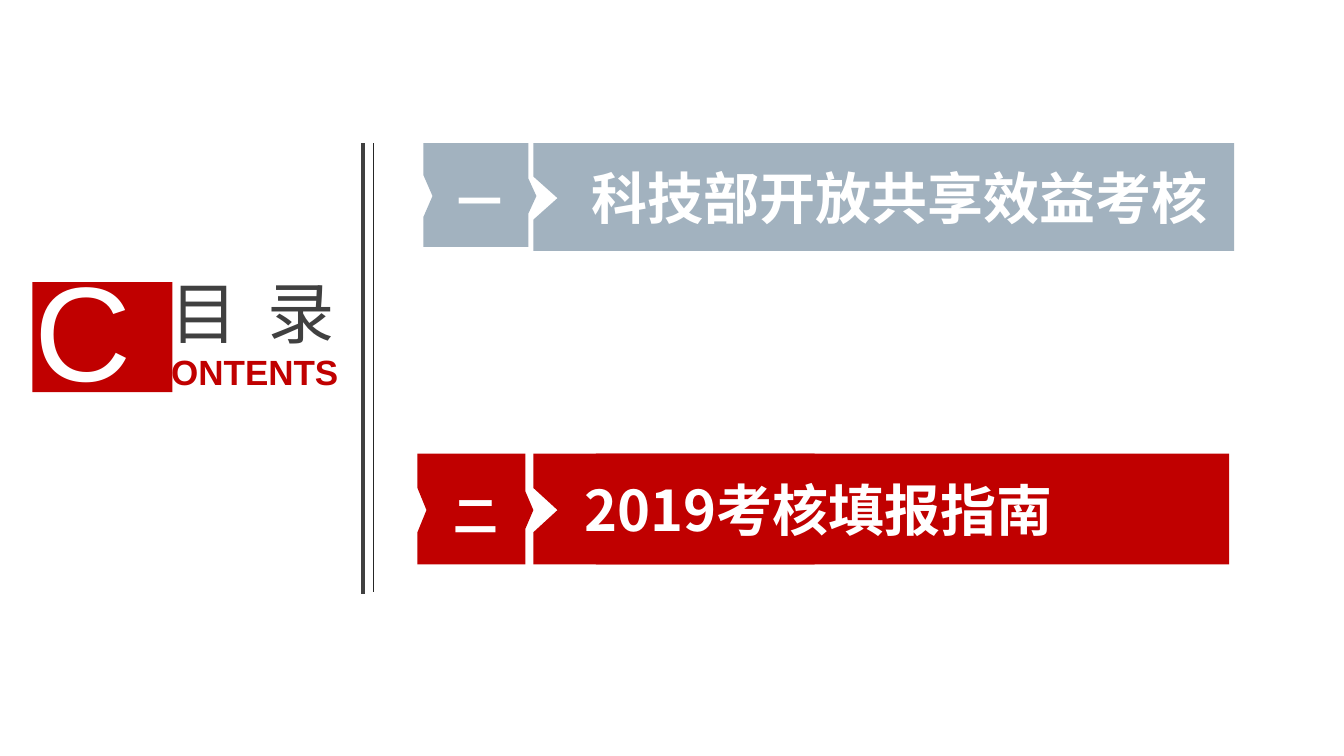
from dataclasses import dataclass

from lxml import etree
from pptx import Presentation
from pptx import util as u
from pptx.dml.color import RGBColor
from pptx.enum import shapes, text
from pptx.oxml.ns import qn

UNIT = u.Inches(0.1)  # one grid column or row
COLUMNS, ROWS = 133.3, 75


@dataclass(frozen=True)
class Theme:
    red: str = "C00000"
    grey_blue: str = "A2B2BF"
    dark: str = "404040"
    darkest: str = "262626"
    white: str = "FFFFFF"
    chinese: str = "Noto Sans CJK SC"
    latin: str = "Arial"
    initial_size: int = 96
    title_size: int = 48
    banner_size: int = 40
    number_size: int = 32
    contents_size: int = 25


THEME = Theme()


def grid(*lengths):
    """Turn grid columns or rows into slide lengths."""
    return [u.Emu(round(length * UNIT)) for length in lengths]


def paint(shape, color):
    shape.shadow.inherit = False
    shape.fill.solid()
    shape.fill.fore_color.rgb = RGBColor.from_string(color)
    shape.line.fill.background()


def write(shape, words, *, size, color, font=THEME.chinese, bold=False,
          align=text.PP_ALIGN.LEFT, anchor=text.MSO_ANCHOR.TOP,
          line_spacing=1.0, tracking=0):
    frame = shape.text_frame
    frame.word_wrap = True
    frame.auto_size = text.MSO_AUTO_SIZE.NONE
    frame.vertical_anchor = anchor
    paragraph = frame.paragraphs[0]
    paragraph.alignment = align
    paragraph.line_spacing = line_spacing
    paragraph.space_before = u.Pt(0)
    run = paragraph.add_run()
    run.text = words
    run.font.size = u.Pt(size)
    run.font.bold = bold
    run.font.color.rgb = RGBColor.from_string(color)
    run.font.name = font
    properties = run.font._element
    etree.SubElement(properties, qn("a:ea")).set("typeface", font)
    if tracking:
        properties.set("spc", str(round(tracking * 100)))


def add_text(slide, box, words, **style):
    write(slide.shapes.add_textbox(*grid(*box)), words, **style)


def add_block(slide, box, color):
    block = slide.shapes.add_shape(shapes.MSO_SHAPE.RECTANGLE, *grid(*box))
    paint(block, color)


def add_ribbon(slide, box, tip, notch, color):
    """Draw a ribbon with a notch on its left and a point on its right."""
    left, top, width, height = box
    shoulder = left + width - tip
    outline = [
        (left, 0), (shoulder, 0), (shoulder, 0.34), (left + width, 0.51),
        (shoulder, 0.68), (shoulder, 1), (left, 1), (left, 0.71),
        (left + notch, 0.51), (left, 0.31),
    ]
    points = [grid(x, top + share * height) for x, share in outline]
    builder = slide.shapes.build_freeform(*points[0])
    builder.add_line_segments(points[1:], close=True)
    ribbon = builder.convert_to_shape()
    paint(ribbon, color)
    return ribbon


def add_heading(slide, box):
    left, top, width, height = box
    # Red square with the initial
    add_block(slide, (left, top, 13.9, height), THEME.red)
    add_text(slide, (left - 0.8, top - 4, 14.7, 18.5), "C", font=THEME.latin,
             size=THEME.initial_size, color=THEME.white)
    # Title and the rest of the word
    title = slide.shapes.title
    title.left, title.top, title.width, title.height = grid(
        left + 12.7, top - 1.6, width - 12.7, 9.8)
    write(title, "目 录", size=THEME.title_size, color=THEME.dark, tracking=5.4)
    add_text(slide, (left + 12.8, top + 6.3, width - 12.8, 5.8), "ONTENTS",
             font=THEME.latin, size=THEME.contents_size, color=THEME.red, bold=True)


def add_divider(slide, box):
    left, top, width, height = box
    rules = [(left, height, THEME.dark, 3),
             (left + width, height - 0.2, THEME.darkest, 0.25)]
    for x, length, color, weight in rules:
        rule = slide.shapes.add_connector(
            shapes.MSO_CONNECTOR.STRAIGHT, *grid(x, top, x, top + length))
        rule.line.color.rgb = RGBColor.from_string(color)
        rule.line.width = u.Pt(weight)
        etree.SubElement(rule._element.spPr, qn("a:effectLst"))


def add_entry(slide, box, number, words, color, *, tag_width, tag_height, indent):
    left, top, width, height = box
    # Numbered tag
    tag = add_ribbon(slide, (left, top, tag_width, tag_height), 0.8, 0.9, color)
    write(tag, number, size=THEME.number_size, color=THEME.white, bold=True,
          align=text.PP_ALIGN.CENTER, anchor=text.MSO_ANCHOR.MIDDLE, line_spacing=1.2)
    # Banner
    banner, right = 52.9, left + width
    add_ribbon(slide, (banner, top, 30, height), 2.1, 2.4, color)
    add_block(slide, (banner + 6.2, top, right - banner - 6.2, height), color)
    add_text(slide, (banner + indent, top + (height - 7.7) / 2, 65.2, 7.7), words,
             size=THEME.banner_size, color=THEME.white, bold=True)


def add_contents_slide(presentation):
    title_only = presentation.slide_layouts[5]
    slide = presentation.slides.add_slide(title_only)
    add_heading(slide, (3.2, 28, 37, 10.9))
    add_divider(slide, (36, 14.2, 1, 44.7))
    add_entry(slide, (42, 14.2, 80.4, 10.7), "一", "科技部开放共享效益考核",
              THEME.grey_blue, tag_width=11.2, tag_height=10.3, indent=4.8)
    add_entry(slide, (41.4, 45, 80.5, 11), "二", "2019考核填报指南",
              THEME.red, tag_width=11.5, tag_height=11, indent=4.1)


def main():
    presentation = Presentation()
    presentation.slide_width, presentation.slide_height = grid(COLUMNS, ROWS)
    add_contents_slide(presentation)
    presentation.save("out.pptx")


if __name__ == "__main__":
    main()
